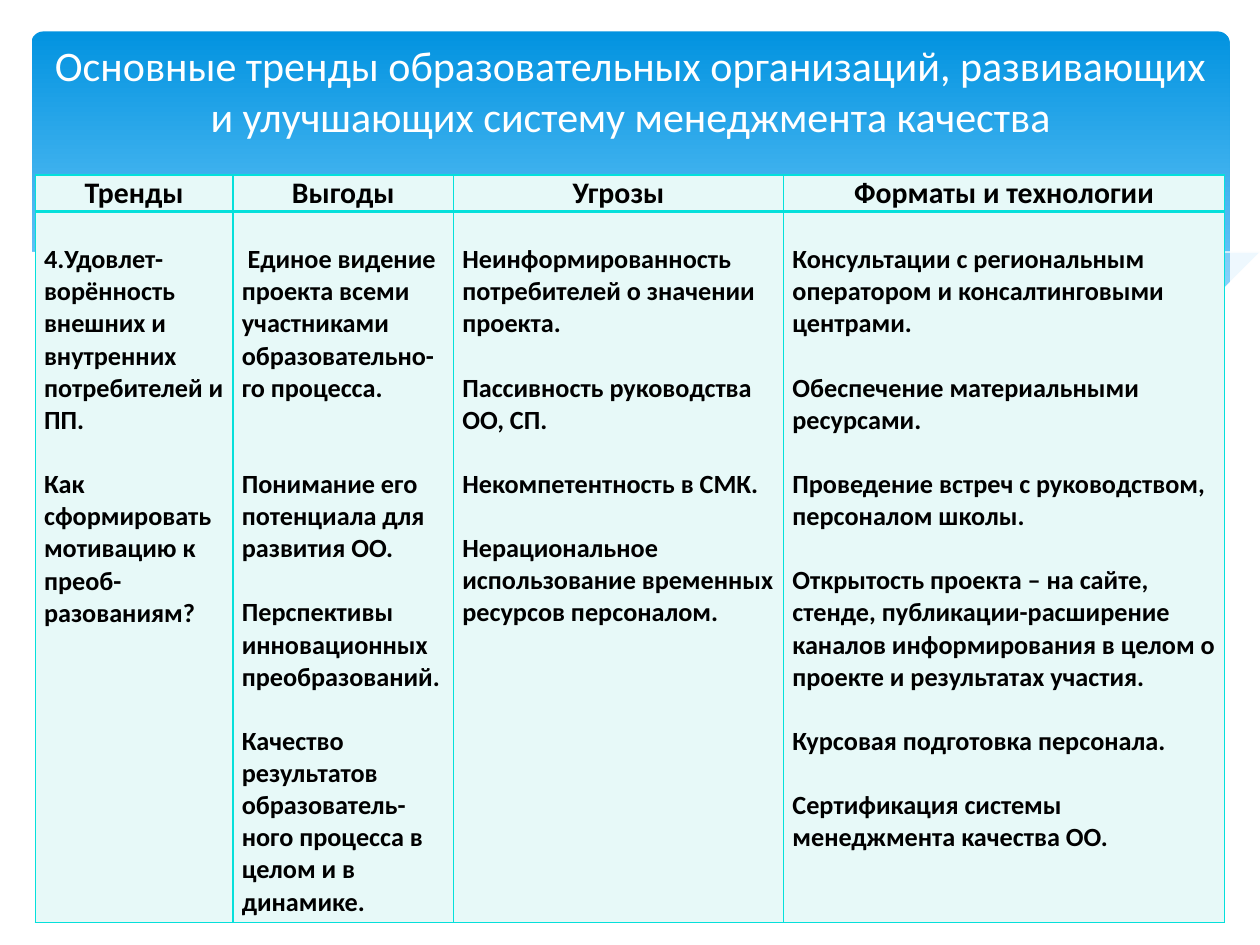
from lxml import etree
from pptx import Presentation
from pptx.dml.color import RGBColor
from pptx.enum import shapes, text
from pptx.oxml import ns
from pptx.util import Inches, Pt

COLORS = {
    "sky": "0293E0", "light_sky": "83D3FE", "mist": "C6E7FC", "white": "FFFFFF",
    "black": "000000", "cell": "E7F9F8", "border": "05E0DB",
}
BODY_SIZE = 15
LINE_HEIGHT = 18.3  # points, one line of body text


def rgb(name):
    return RGBColor.from_string(COLORS[name])


class SlideBuilder:
    font = "Calibri"

    def __init__(self, slide):
        self.slide = slide

    def style(self, paragraph, size, color, bold=False, align=None):
        font = paragraph.font
        font.name, font.size, font.bold = self.font, Pt(size), bold
        font.color.rgb = rgb(color)
        paragraph.alignment = align

    def title(self, wording, left, top, width, height):
        title = self.slide.shapes.title
        title.left, title.top = Inches(left), Inches(top)
        title.width, title.height = Inches(width), Inches(height)
        frame = title.text_frame
        frame.text = wording
        frame.word_wrap = True
        frame.auto_size = text.MSO_AUTO_SIZE.NONE
        frame.vertical_anchor = text.MSO_ANCHOR.MIDDLE
        self.style(frame.paragraphs[0], 24, "white", align=text.PP_ALIGN.CENTER)
        # The title lies in front of the backdrop
        self.slide.shapes._spTree.append(title._element)

    def gradient_panel(self, left, top, width, height):
        panel = self.slide.shapes.add_shape(
            shapes.MSO_SHAPE.ROUNDED_RECTANGLE,
            Inches(left), Inches(top), Inches(width), Inches(height))
        panel.adjustments[0] = 0.034
        panel.shadow.inherit = False
        panel.line.fill.background()
        panel.fill.gradient()
        panel.fill.gradient_angle = 270
        stops = panel.fill.gradient_stops
        for stop, position, color in zip(stops, (0, 0.9), ("sky", "light_sky")):
            stop.position = position
            stop.color.rgb = rgb(color)

    def wave(self, points, fill=None, alpha=100):
        """A filled wave, or a thin white curve when there is no fill."""
        builder = self.slide.shapes.build_freeform(*points[0], scale=Inches(1))
        builder.add_line_segments(points[1:], close=fill is not None)
        wave = builder.convert_to_shape()
        wave.shadow.inherit = False
        if fill is None:
            wave.fill.background()
            wave.line.color.rgb = rgb("white")
            wave.line.width = Pt(0)
            return
        wave.line.fill.background()
        wave.fill.solid()
        wave.fill.fore_color.rgb = rgb(fill)
        if alpha < 100:
            color = wave._element.spPr.find(".//" + ns.qn("a:srgbClr"))
            etree.SubElement(color, ns.qn("a:alpha"), val=str(alpha * 1000))

    def cell_borders(self, cell, widths):
        properties = cell._tc.get_or_add_tcPr()
        for index, (side, width) in enumerate(widths.items()):
            line = etree.Element(ns.qn(f"a:ln{side}"), w=str(Pt(width)))
            fill = etree.SubElement(line, ns.qn("a:solidFill"))
            etree.SubElement(fill, ns.qn("a:srgbClr"), val=COLORS["border"])
            properties.insert(index, line)

    def cell(self, cell, entries, size, align=None, top=0, top_border=1, bottom_border=1):
        """Fill a cell with entries of (blank lines before, wording)."""
        cell.margin_left = cell.margin_right = Inches(0.07)
        cell.margin_top, cell.margin_bottom = Pt(top), 0
        cell.fill.solid()
        cell.fill.fore_color.rgb = rgb("cell")
        self.cell_borders(cell, {"L": 1, "R": 1, "T": top_border, "B": bottom_border})
        frame = cell.text_frame
        for index, (gap, wording) in enumerate(entries):
            paragraph = frame.add_paragraph() if index else frame.paragraphs[0]
            paragraph.text = wording
            paragraph.space_before = Pt(gap * LINE_HEIGHT)
            self.style(paragraph, size, "black", True, align)

    def table(self, columns, left, top, widths, heights):
        table = self.slide.shapes.add_table(
            len(heights), len(widths), Inches(left), Inches(top),
            Inches(sum(widths)), Inches(sum(heights))).table
        table.first_row = table.horz_banding = False
        for row, height in zip(table.rows, heights):
            row.height = Inches(height)
        for index, (heading, entries) in enumerate(columns.items()):
            table.columns[index].width = Inches(widths[index])
            self.cell(table.cell(0, index), [(0, heading)], 17,
                      text.PP_ALIGN.CENTER, bottom_border=2)
            self.cell(table.cell(1, index), entries, BODY_SIZE,
                      top=LINE_HEIGHT, top_border=2)


# Backdrop curves, in inches
RIGHT_WAVE = [
    (9.76, 2), (9.35, 2.07), (8.61, 2.23), (7.79, 2.42), (6.61, 2.65), (7.19, 2.72),
    (7.69, 2.77), (8.14, 2.78), (8.63, 2.75), (9.05, 2.69), (9.42, 2.59), (9.76, 2.47)]
MIDDLE_WAVE = [
    (8.93, 2.73), (8.37, 2.65), (7.75, 2.54), (7.06, 2.4), (6.29, 2.22), (5.69, 2.08),
    (5.14, 1.98), (4.65, 1.91), (4.2, 1.87), (3.61, 1.85), (3.13, 1.88), (2.86, 1.91),
    (3.42, 1.99), (4.04, 2.11), (4.91, 2.32), (5.66, 2.48), (6.34, 2.61), (6.95, 2.7),
    (7.48, 2.76), (8.07, 2.78), (8.57, 2.77)]
LONG_CURVE = [
    (3.09, 1.95), (3.44, 1.9), (4.01, 1.87), (4.69, 1.89), (5.33, 1.94), (6.08, 2.04),
    (6.95, 2.19), (7.6, 2.33), (8.31, 2.51), (9.07, 2.72)]
SHORT_CURVE = [
    (6.13, 2.57), (6.72, 2.41), (7.48, 2.23), (8.06, 2.1), (8.66, 1.99), (9.24, 1.9),
    (9.75, 1.85)]
WHITE_WAVE = [
    (9.77, 2.46), (9.4, 2.59), (8.99, 2.69), (8.5, 2.75), (8.09, 2.77), (7.44, 2.74),
    (6.68, 2.65), (5.79, 2.5), (5.03, 2.33), (4.18, 2.13), (3.4, 1.97), (2.71, 1.88),
    (2.11, 1.84), (1.61, 1.84), (1.06, 1.89), (0.67, 1.97), (0.4, 2.05), (0.23, 2.13),
    (0.23, 3.29), (9.77, 3.29)]

TRENDS = {
    "Тренды": [
        (0, "4.Удовлет-ворённость внешних и внутренних"),
        (0, "потребителей и ПП."),
        (1, "Как сформировать мотивацию к преоб-разованиям?")],
    "Выгоды": [
        (0, " Единое видение проекта всеми участниками образовательно-го процесса."),
        (2, "Понимание его потенциала для развития ОО."),
        (1, "Перспективы инновационных преобразований."),
        (1, "Качество результатов образователь-ного процесса в целом и в динамике.")],
    "Угрозы": [
        (0, "Неинформированность потребителей о значении проекта."),
        (1, "Пассивность руководства ОО, СП."),
        (1, "Некомпетентность в СМК."),
        (1, "Нерациональное использование временных ресурсов персоналом.")],
    "Форматы и технологии": [
        (0, "Консультации с региональным оператором и консалтинговыми центрами."),
        (1, "Обеспечение материальными ресурсами."),
        (1, "Проведение встреч с руководством, персоналом школы."),
        (1, "Открытость проекта – на сайте, стенде, публикации-расширение каналов "
            "информирования в целом о проекте и результатах участия."),
        (1, "Курсовая подготовка персонала."),
        (1, "Сертификация системы менеджмента качества ОО.")],
}


def main():
    deck = Presentation()
    deck.slide_width, deck.slide_height = Inches(10), Inches(7.5)
    page = SlideBuilder(deck.slides.add_slide(deck.slide_layouts[5]))

    # Backdrop
    page.gradient_panel(0.25, 0.25, 9.51, 2.7)
    page.wave(RIGHT_WAVE, "mist", 29)
    page.wave(MIDDLE_WAVE, "mist", 40)
    page.wave(LONG_CURVE)
    page.wave(SHORT_CURVE)
    page.wave(WHITE_WAVE, "white")

    # Trends table and title
    page.table(TRENDS, 0.28, 1.39, (1.57, 1.75, 2.62, 3.5), (0.29, 5.64))
    page.title("Основные тренды образовательных организаций, развивающих "
               "и улучшающих систему менеджмента качества", 0.28, 0.21, 9.45, 1.01)

    deck.save("out.pptx")


if __name__ == "__main__":
    main()
